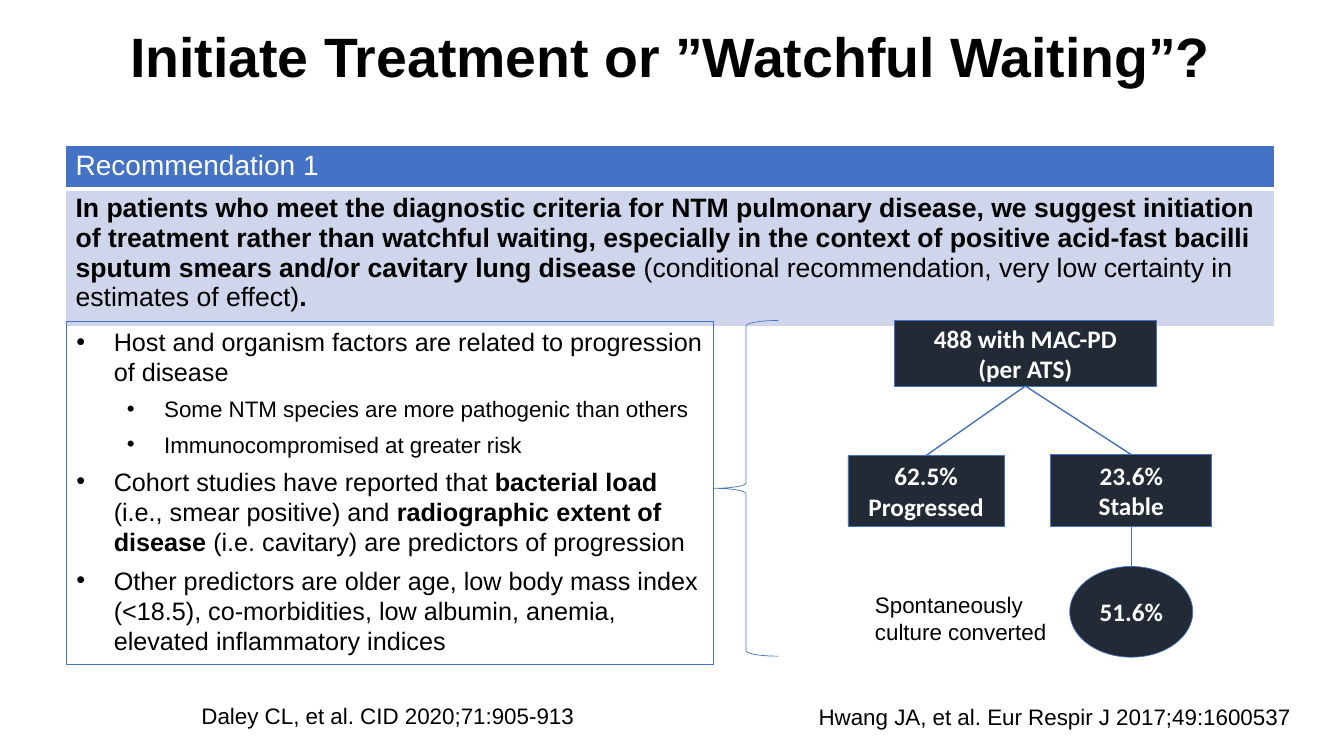
from lxml import etree
from pptx import Presentation
from pptx.dml.color import RGBColor
from pptx.enum.shapes import MSO_CONNECTOR, MSO_SHAPE
from pptx.enum.text import MSO_ANCHOR, PP_ALIGN
from pptx.oxml.ns import qn
from pptx.util import Emu, Pt

RECT, OVAL, BRACE = MSO_SHAPE.RECTANGLE, MSO_SHAPE.OVAL, MSO_SHAPE.LEFT_BRACE
STRAIGHT = MSO_CONNECTOR.STRAIGHT
LEFT, CENTER = PP_ALIGN.LEFT, PP_ALIGN.CENTER
TOP, MIDDLE = MSO_ANCHOR.TOP, MSO_ANCHOR.MIDDLE

SCALE = 9144  # 100 px to the inch
BLUE, PALE, DARK = "4472C4", "CFD5EA", "222A35"
BLACK, WHITE = "000000", "FFFFFF"

ADVICE = [
    ("In patients who meet the diagnostic criteria for NTM pulmonary disease, "
     "we suggest initiation of treatment rather than watchful waiting, "
     "especially in the context of positive acid-fast bacilli sputum smears "
     "and/or cavitary lung disease ", True),
    ("(conditional recommendation, very low certainty in estimates of effect)",
     False),
    (".", True),
]

# Level, then runs of text and bold
FACTORS = [
    (0, [("Host and organism factors are related to progression of disease",
          False)]),
    (1, [("Some NTM species are more pathogenic than others", False)]),
    (1, [("Immunocompromised at greater risk", False)]),
    (0, [("Cohort studies have reported that ", False),
         ("bacterial load ", True),
         ("(i.e., smear positive) and ", False),
         ("radiographic extent of disease ", True),
         ("(i.e. cavitary) are predictors of progression", False)]),
    (0, [("Other predictors are older age, low body mass index (<18.5), "
          "co-morbidities, low albumin, anemia, elevated inflammatory indices",
          False)]),
]


def px(*nums):
    return [Emu(num * SCALE) for num in nums]


def color(code):
    return RGBColor.from_string(code)


def style(para, size, code=BLACK, face="Arial", bold=None, align=LEFT):
    para.alignment = align
    font = para.font
    font.size, font.name, font.bold = Pt(size), face, bold
    font.color.rgb = color(code)


def add_runs(para, runs):
    for text, bold in runs:
        run = para.add_run()
        run.text = text
        run.font.bold = bold


def add_lines(frame, lines, size, **look):
    for i, line in enumerate(lines):
        para = frame.paragraphs[0] if i == 0 else frame.add_paragraph()
        para.text = line
        style(para, size, **look)


def add_label(slide, box, lines, size, wrap=True, anchor=TOP, **look):
    frame = slide.shapes.add_textbox(*px(*box)).text_frame
    frame.word_wrap = wrap
    frame.vertical_anchor = anchor
    add_lines(frame, lines, size, **look)
    return frame


def add_form(slide, kind, box, fill=None, width=0.5):
    form = slide.shapes.add_shape(kind, *px(*box))
    form.shadow.inherit = False
    if fill:
        form.fill.solid()
        form.fill.fore_color.rgb = color(fill)
    else:
        form.fill.background()
    form.line.color.rgb = color(BLUE)
    form.line.width = Pt(width)
    return form


def add_node(slide, kind, box, *lines):
    node = add_form(slide, kind, box, DARK)
    node.text_frame.vertical_anchor = MIDDLE
    add_lines(node.text_frame, lines, 18, code=WHITE, face="Calibri",
              bold=True, align=CENTER)
    return node


def add_link(slide, start, end):
    link = slide.shapes.add_connector(STRAIGHT, 0, 0, 0, 0)
    link.begin_connect(start, 2)
    link.end_connect(end, 0)
    link.line.color.rgb = color(BLUE)
    link.line.width = Pt(1)
    etree.SubElement(link._element.spPr, qn("a:effectLst"))


def add_bullet(para, level):
    para.level = level
    props = para._p.get_or_add_pPr()
    props.set("marL", str((37 + 50 * level) * SCALE))
    props.set("indent", str(-37 * SCALE))
    etree.SubElement(props, qn("a:buFont")).set("typeface", "Arial")
    etree.SubElement(props, qn("a:buChar")).set("char", "•")


def add_border(cell, side, width):
    edge = etree.SubElement(cell._tc.get_or_add_tcPr(), qn("a:" + side))
    edge.set("w", str(Pt(width)))
    fill = etree.SubElement(edge, qn("a:solidFill"))
    etree.SubElement(fill, qn("a:srgbClr")).set("val", WHITE)


def add_advice(slide):
    table = slide.shapes.add_table(2, 1, *px(65, 144, 1199, 177)).table
    rows = [(43, BLUE, WHITE, 20, [("Recommendation 1", False)], 1, 3),
            (134, PALE, BLACK, 19, ADVICE, 3, 1)]
    for i, (high, fill, ink, size, runs, top, base) in enumerate(rows):
        table.rows[i].height = px(high)[0]
        cell = table.cell(i, 0)
        for side, width in zip(("lnL", "lnR", "lnT", "lnB"),
                               (1, 1, top, base)):
            add_border(cell, side, width)
        cell.fill.solid()
        cell.fill.fore_color.rgb = color(fill)
        para = cell.text_frame.paragraphs[0]
        style(para, size, ink)
        add_runs(para, runs)


def add_factors(slide):
    frame = add_form(slide, RECT, (66, 319, 642, 340), width=0.75).text_frame
    frame.word_wrap = True
    frame.vertical_anchor = TOP
    for i, (level, runs) in enumerate(FACTORS):
        para = frame.paragraphs[0] if i == 0 else frame.add_paragraph()
        add_bullet(para, level)
        para.space_after = Pt(6)
        style(para, 18 - 2 * level)
        add_runs(para, runs)


def add_tree(slide):
    root = add_node(slide, RECT, (887, 318, 260, 65),
                    "488 with MAC-PD", "(per ATS)")
    worse = add_node(slide, RECT, (841, 452, 155, 70), "62.5%", "Progressed")
    stable = add_node(slide, RECT, (1042, 451, 160, 71), "23.6%", "Stable")
    clear = add_node(slide, OVAL, (1061, 562, 122, 90), "51.6%")
    for start, end in ((root, worse), (root, stable), (stable, clear)):
        add_link(slide, start, end)
    add_label(slide, (858, 582, 290, 64),
              ["Spontaneously", "culture converted"], 16)


def main():
    deck = Presentation()
    deck.slide_width, deck.slide_height = px(1333, 750)
    slide = deck.slides.add_slide(deck.slide_layouts[6])

    # Title
    title = add_label(slide, (90, 5, 1150, 108),
                      ["Initiate Treatment or ”Watchful Waiting”?"], 39.6,
                      anchor=MIDDLE, bold=True, align=CENTER)
    title.paragraphs[0].line_spacing = 0.9

    # Recommendation and its reasons
    add_advice(slide)
    add_factors(slide)

    # Patient outcomes
    add_form(slide, BRACE, (708, 318, 64, 333))
    add_tree(slide)

    # References
    add_label(slide, (190, 692, 394, 37),
              ["Daley CL, et al. CID 2020;71:905-913"], 16, wrap=False)
    add_label(slide, (802, 693, 519, 37),
              ["Hwang JA, et al. Eur Respir J 2017;49:1600537"], 16)

    deck.save("out.pptx")


if __name__ == "__main__":
    main()
